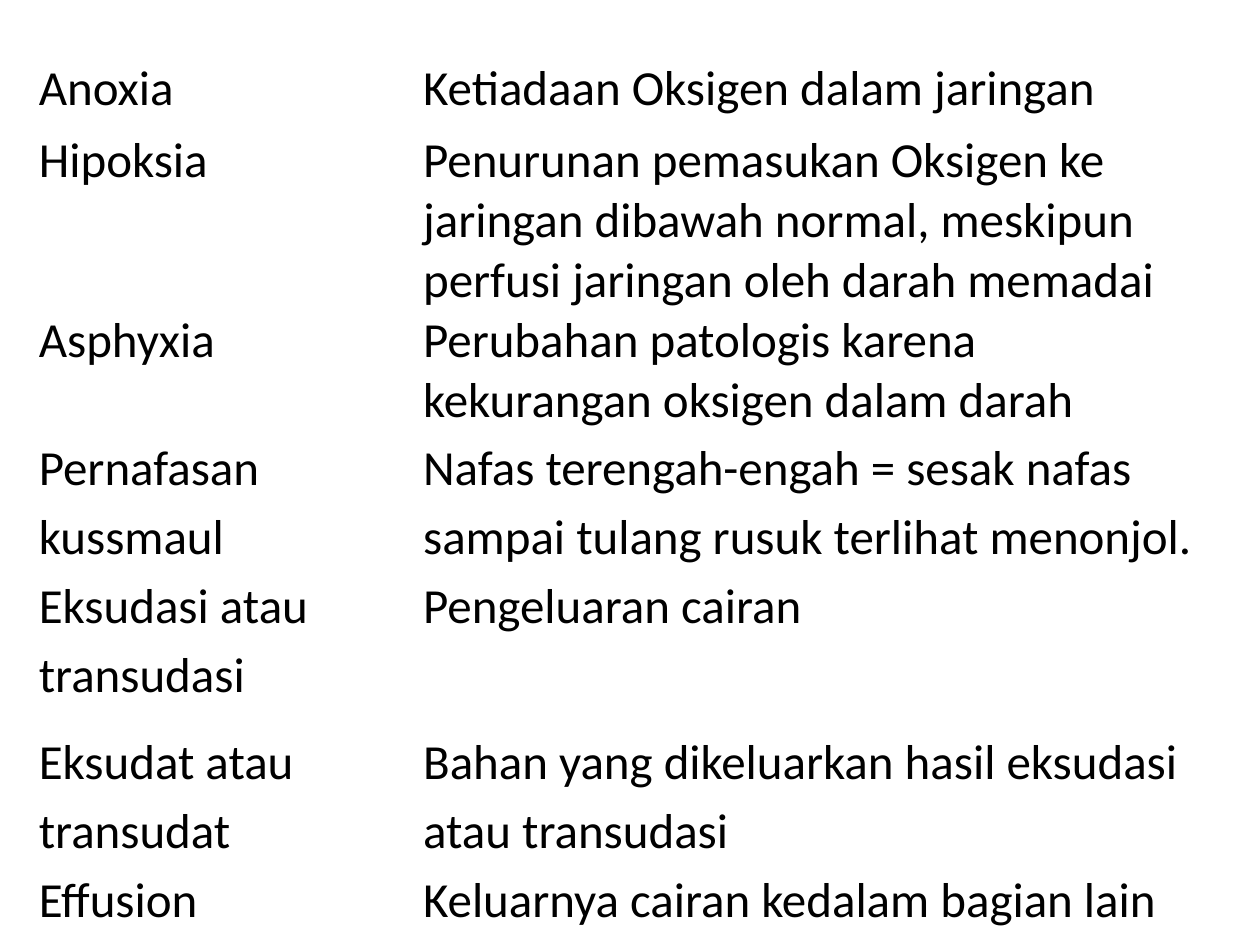
import pptx
import pptx.dml.color
import pptx.oxml
import pptx.oxml.ns
import pptx.util
from dataclasses import dataclass

Pt = pptx.util.Pt


@dataclass(frozen=True)
class Theme:
    font: str = "Calibri"
    size: float = 28
    text: str = "000000"
    border: str = "FFFFFF"
    thin: float = 1
    thick: float = 3
    inset: float = 5.4


THEME = Theme()

# Term, definition, row height, line spacing
GLOSSARY = [
    ("Anoxia", "Ketiadaan Oksigen dalam jaringan", 41, 1),
    ("Hipoksia", "Penurunan pemasukan Oksigen ke jaringan dibawah normal, "
     "meskipun perfusi jaringan oleh darah memadai", 93.6, 1),
    ("Asphyxia", "Perubahan patologis karena kekurangan oksigen dalam darah", 62.6, 1),
    ("Pernafasan kussmaul", "Nafas terengah-engah = sesak nafas sampai tulang "
     "rusuk terlihat menonjol.", 69.8, 1.15),
    ("Eksudasi atau transudasi", "Pengeluaran cairan", 89.3, 1.15),
    ("Eksudat atau transudat", "Bahan yang dikeluarkan hasil eksudasi atau transudasi",
     69.8, 1.15),
    ("Effusion", "Keluarnya cairan kedalam bagian lain", 41, 1.15),
]


def set_borders(cell, bottom):
    # Border lines must come before the fill in the cell properties
    properties = cell._tc.get_or_add_tcPr()
    widths = {"L": THEME.thin, "R": THEME.thin, "T": THEME.thin, "B": bottom}
    for position, (side, width) in enumerate(widths.items()):
        line = pptx.oxml.parse_xml(
            f'<a:ln{side} {pptx.oxml.ns.nsdecls("a")} w="{Pt(width)}">'
            f'<a:solidFill><a:srgbClr val="{THEME.border}"/></a:solidFill></a:ln{side}>')
        properties.insert(position, line)


def format_cell(cell, text, spacing, bottom):
    cell.fill.background()
    set_borders(cell, bottom)
    cell.margin_left = cell.margin_right = Pt(THEME.inset)
    cell.margin_top = cell.margin_bottom = 0
    cell.text = text
    paragraph = cell.text_frame.paragraphs[0]
    paragraph.line_spacing = float(spacing)
    paragraph.font.name = THEME.font
    paragraph.font.size = Pt(THEME.size)
    paragraph.font.color.rgb = pptx.dml.color.RGBColor.from_string(THEME.text)


def add_glossary(slide, left, top, width, term_width):
    height = sum(entry[2] for entry in GLOSSARY)
    table = slide.shapes.add_table(
        len(GLOSSARY), 2, Pt(left), Pt(top), Pt(width), Pt(height)).table
    table.first_row = False
    table.horz_banding = False
    table.columns[0].width = Pt(term_width)
    table.columns[1].width = Pt(width - term_width)
    for index, (term, definition, row_height, spacing) in enumerate(GLOSSARY):
        table.rows[index].height = Pt(row_height)
        bottom = THEME.thick if index == 0 else THEME.thin
        for column, text in enumerate((term, definition)):
            format_cell(table.cell(index, column), text, spacing, bottom)


def main():
    presentation = pptx.Presentation()
    presentation.slide_width = Pt(720)
    presentation.slide_height = Pt(540)
    # Blank layout: the slide has no title
    slide = presentation.slides.add_slide(presentation.slide_layouts[6])
    add_glossary(slide, left=16.8, top=33.8, width=681, term_width=219.6)
    presentation.save("out.pptx")


if __name__ == "__main__":
    main()
